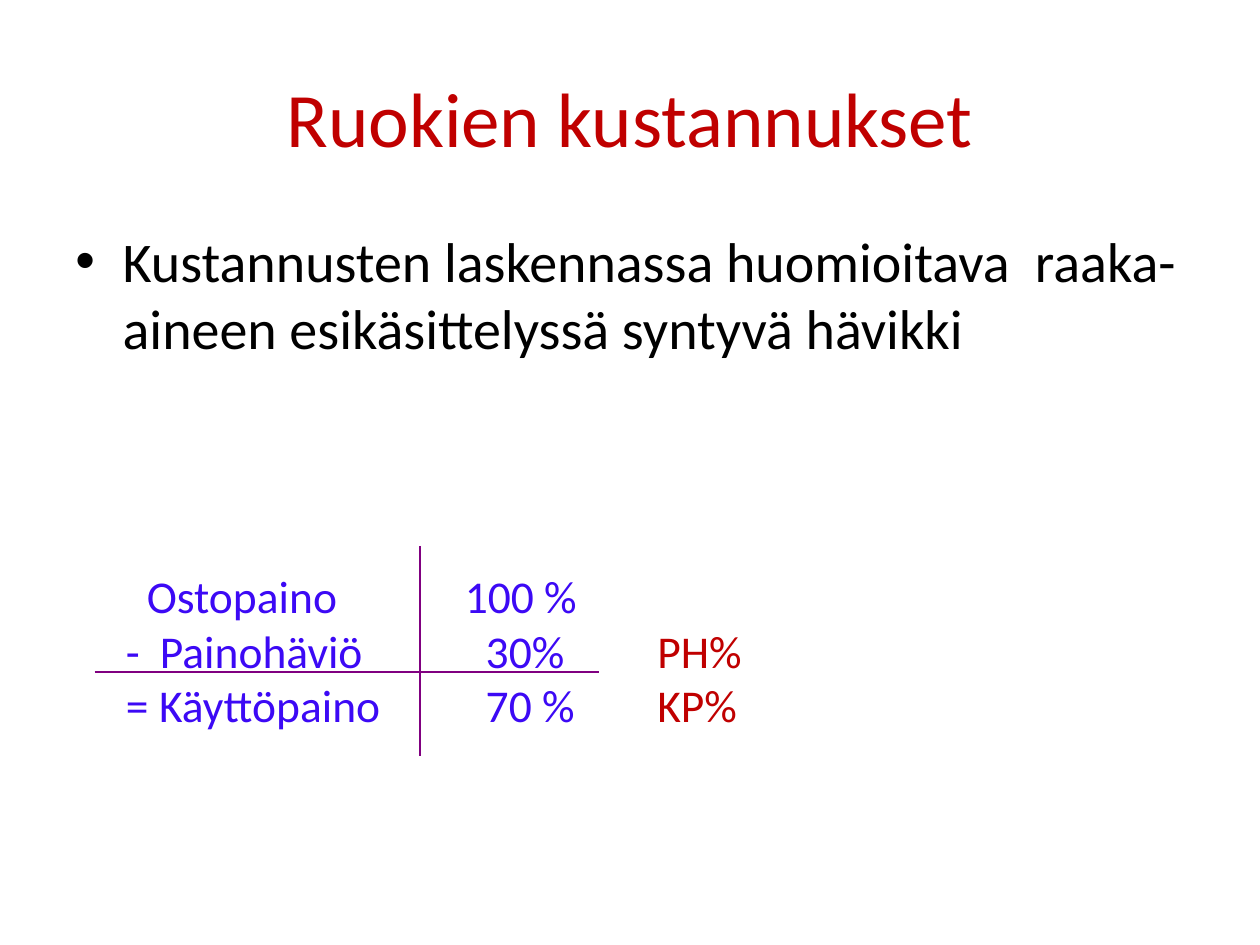
from dataclasses import dataclass

from lxml import etree
from pptx import Presentation
from pptx.dml.color import RGBColor
from pptx.enum.shapes import MSO_CONNECTOR
from pptx.enum.text import MSO_ANCHOR, PP_ALIGN
from pptx.oxml.ns import qn
from pptx.util import Pt

STRAIGHT = MSO_CONNECTOR.STRAIGHT
MIDDLE = MSO_ANCHOR.MIDDLE
CENTER = PP_ALIGN.CENTER


@dataclass(frozen=True)
class Theme:
    font: str = "Calibri"
    heading: RGBColor = RGBColor(0xC0, 0x00, 0x00)
    body: RGBColor = RGBColor(0x00, 0x00, 0x00)
    figures: RGBColor = RGBColor(0x3C, 0x09, 0xF5)
    rule: RGBColor = RGBColor(0x80, 0x00, 0x80)
    heading_size: int = 44
    body_size: int = 32
    figures_size: int = 26
    rule_width: int = 1


THEME = Theme()
HEADING = "Ruokien kustannukset"
POINT = "Kustannusten laskennassa huomioitava  raaka-aineen esikäsittelyssä syntyvä hävikki"
WEIGHTS = [
    {"label": "\tOstopaino", "label_tabs": [12], "share": "100 %", "code": ""},
    {"label": "-\tPainohäviö", "label_tabs": [19.5], "share": "\t30%", "code": "\tPH%"},
    {"label": "=\tKäyttöpaino", "label_tabs": [19], "share": "\t70 %", "code": "\tKP%"},
]
SHARE_TABS = [12, 110]

HEADING_BOX = (36, 21.6, 648, 90)
POINT_BOX = (36, 126, 648, 356.4)
LABEL_BOX = (64.8, 321.12, 162, 101.52)
SHARE_BOX = (258.48, 321.12, 173.52, 101.52)
RULES = [(54, 384, 342, 384), (240, 312, 240, 432)]
BULLET_INDENT = 27


def style(paragraph, size, color):
    paragraph.font.name = THEME.font
    paragraph.font.size = Pt(size)
    paragraph.font.color.rgb = color


def add_text_frame(slide, box):
    frame = slide.shapes.add_textbox(*map(Pt, box)).text_frame
    frame.word_wrap = True
    return frame


def set_tabs(paragraph, stops):
    tabs = etree.SubElement(paragraph._p.get_or_add_pPr(), qn("a:tabLst"))
    for stop in stops:
        etree.SubElement(tabs, qn("a:tab"), pos=str(Pt(stop)), algn="l")


def add_heading(slide):
    heading = slide.shapes.title
    heading.left, heading.top, heading.width, heading.height = map(Pt, HEADING_BOX)
    heading.text_frame.text = HEADING
    heading.text_frame.vertical_anchor = MIDDLE
    paragraph = heading.text_frame.paragraphs[0]
    paragraph.alignment = CENTER
    style(paragraph, THEME.heading_size, THEME.heading)


def add_point(slide):
    paragraph = add_text_frame(slide, POINT_BOX).paragraphs[0]
    paragraph.text = POINT
    properties = paragraph._p.get_or_add_pPr()
    properties.set("marL", str(Pt(BULLET_INDENT)))
    properties.set("indent", str(-Pt(BULLET_INDENT)))
    etree.SubElement(properties, qn("a:buFont"), typeface="Arial")
    etree.SubElement(properties, qn("a:buChar"), char="•")
    style(paragraph, THEME.body_size, THEME.body)


def add_rule(slide, ends):
    rule = slide.shapes.add_connector(STRAIGHT, *map(Pt, ends))
    rule.line.color.rgb = THEME.rule
    rule.line.width = Pt(THEME.rule_width)
    etree.SubElement(rule._element.spPr, qn("a:effectLst"))


def add_weights(slide):
    labels = add_text_frame(slide, LABEL_BOX)
    shares = add_text_frame(slide, SHARE_BOX)
    shares.margin_right = 0
    for index, weight in enumerate(WEIGHTS):
        label, share = (
            frame.add_paragraph() if index else frame.paragraphs[0]
            for frame in (labels, shares)
        )
        label.text = weight["label"]
        share.text = weight["share"]
        for paragraph, stops in ((label, weight["label_tabs"]), (share, SHARE_TABS)):
            set_tabs(paragraph, stops)
            style(paragraph, THEME.figures_size, THEME.figures)
        if weight["code"]:
            code = share.add_run()
            code.text = weight["code"]
            code.font.color.rgb = THEME.heading


def main():
    """Build the slide on food costs and preparation loss."""
    deck = Presentation()
    deck.slide_width, deck.slide_height = Pt(720), Pt(540)
    slide = deck.slides.add_slide(deck.slide_layouts[5])
    add_heading(slide)
    add_point(slide)
    for ends in RULES:
        add_rule(slide, ends)
    add_weights(slide)
    deck.save("out.pptx")


if __name__ == "__main__":
    main()
